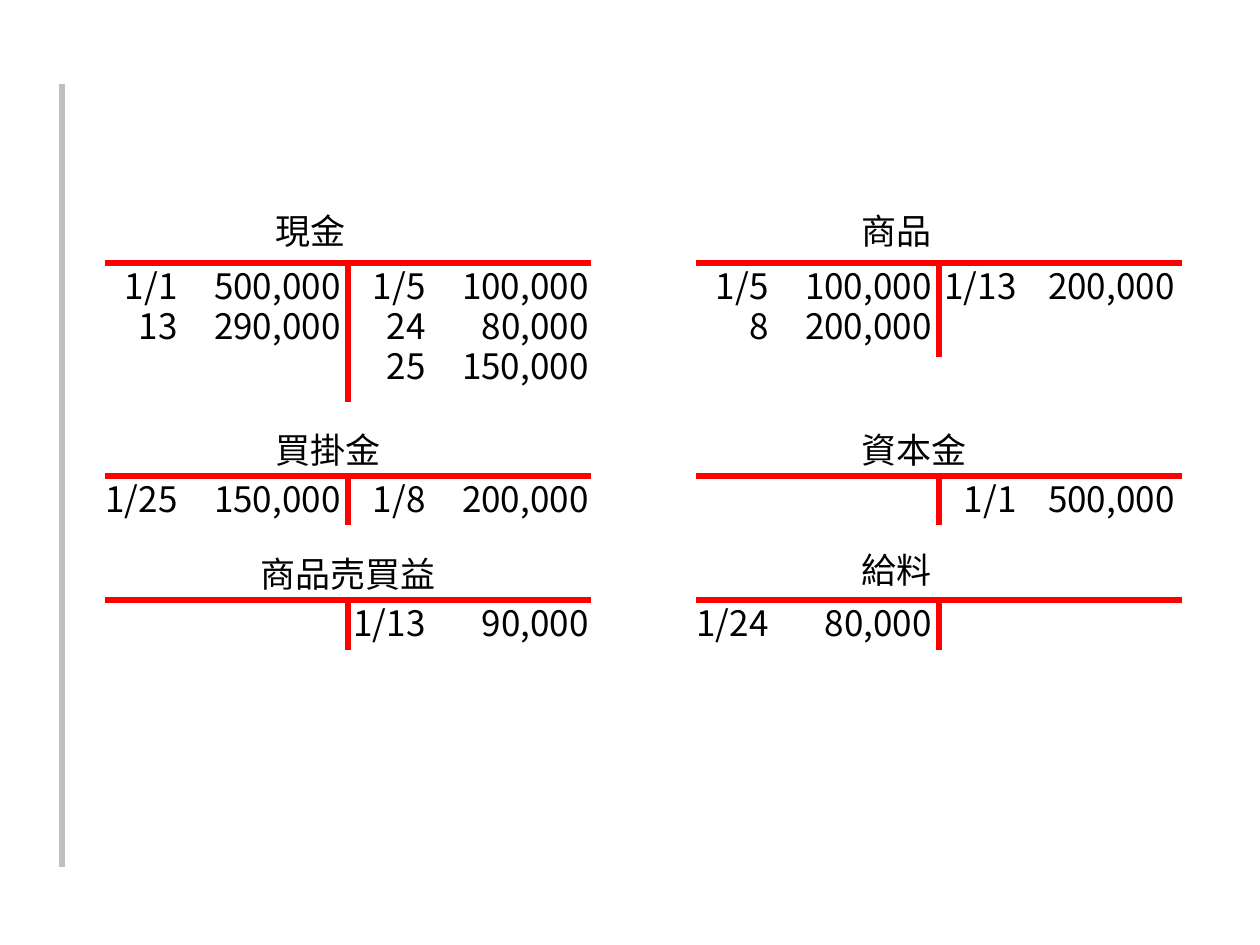
import pptx
import pptx.util
import pptx.dml.color
import pptx.enum.shapes
import pptx.enum.text
from lxml import etree
from dataclasses import dataclass

# Content: title, (title dx, dy, width), stem height, debits, credits
ACCOUNTS = [
    # left column, right column
    [("現金", (158, -60, 179), 139,
      [("1/1", "500,000"), ("13", "290,000")],
      [("1/5", "100,000"), ("24", "80,000"), ("25", "150,000")]),
     ("商品", (153, -60, 179), 94,
      [("1/5", "100,000"), ("8", "200,000")],
      [("1/13", "200,000")])],
    [("買掛金", (158, -54, 179), 49,
      [("1/25", "150,000")],
      [("1/8", "200,000")]),
     ("資本金", (153, -54, 179), 49,
      [],
      [("1/1", "500,000")])],
    [("商品売買益", (143, -54, 203), 50,
      [],
      [("1/13", "90,000")]),
     ("給料", (153, -58, 179), 50,
      [("1/24", "80,000")],
      [])],
]


@dataclass(frozen=True)
class Theme:
    font: str = "Noto Sans CJK JP"
    size: int = 20
    text: str = "000000"
    account: str = "FF0000"
    margin: str = "BFBFBF"
    line: int = 3


THEME = Theme()

# Layout in px
PX = 914400 // 126
COLUMN_LEFTS = (105, 696)
BAR_TOPS = (263, 476, 600)
BAR_WIDTH = 486
ENTRY_RISE, ENTRY_STEP = 5, 40
TEXT_HEIGHT = 55
DATE_WIDTH, AMOUNT_WIDTH = 100, 169
DEBIT_DX = (-15, 79)
CREDIT_DX = ((233, 327), (233, 322))  # one pair per column


def px(value):
    return pptx.util.Emu(round(value * PX))


def add_line(shapes, x1, y1, x2, y2, color):
    line = shapes.add_connector(pptx.enum.shapes.MSO_CONNECTOR.STRAIGHT,
                                px(x1), px(y1), px(x2), px(y2))
    line.line.color.rgb = pptx.dml.color.RGBColor.from_string(color)
    line.line.width = pptx.util.Pt(THEME.line)
    etree.SubElement(line._element.spPr, pptx.oxml.ns.qn("a:effectLst"))


def add_text(shapes, text, left, top, width, align):
    label = shapes.add_textbox(px(left), px(top), px(width), px(TEXT_HEIGHT))
    frame = label.text_frame
    frame.word_wrap = True
    frame.auto_size = pptx.enum.text.MSO_AUTO_SIZE.SHAPE_TO_FIT_TEXT
    frame.text = text
    paragraph = frame.paragraphs[0]
    paragraph.alignment = align
    run = paragraph.runs[0]
    run.font.name = THEME.font
    run.font.size = pptx.util.Pt(THEME.size)
    run.font.color.rgb = pptx.dml.color.RGBColor.from_string(THEME.text)
    east_asian = etree.SubElement(run._r.rPr, pptx.oxml.ns.qn("a:ea"))
    east_asian.set("typeface", THEME.font)


def add_account(slide, account, left, top, credit_dx):
    title, (title_dx, title_dy, title_width), stem, debits, credits = account
    align = pptx.enum.text.PP_ALIGN
    shapes = slide.shapes.add_group_shape().shapes
    middle = left + BAR_WIDTH / 2

    # Title and T
    add_text(shapes, title, left + title_dx, top + title_dy, title_width, align.JUSTIFY)
    add_line(shapes, left, top, left + BAR_WIDTH, top, THEME.account)
    add_line(shapes, middle, top, middle, top + stem, THEME.account)

    # Entries on both sides
    for entries, (date_dx, amount_dx) in ((debits, DEBIT_DX), (credits, credit_dx)):
        for row, (date, amount) in enumerate(entries):
            y = top - ENTRY_RISE + row * ENTRY_STEP
            add_text(shapes, date, left + date_dx, y, DATE_WIDTH, align.RIGHT)
            add_text(shapes, amount, left + amount_dx, y, AMOUNT_WIDTH, align.RIGHT)


def main():
    deck = pptx.Presentation()
    deck.slide_width, deck.slide_height = px(1260), px(945)
    slide = deck.slides.add_slide(deck.slide_layouts[6])

    # Margin line
    add_line(slide.shapes, 62, 84, 62, 867, THEME.margin)

    # Ledger accounts
    for top, accounts in zip(BAR_TOPS, ACCOUNTS):
        for left, credit_dx, account in zip(COLUMN_LEFTS, CREDIT_DX, accounts):
            add_account(slide, account, left, top, credit_dx)

    deck.save("out.pptx")


if __name__ == "__main__":
    main()
